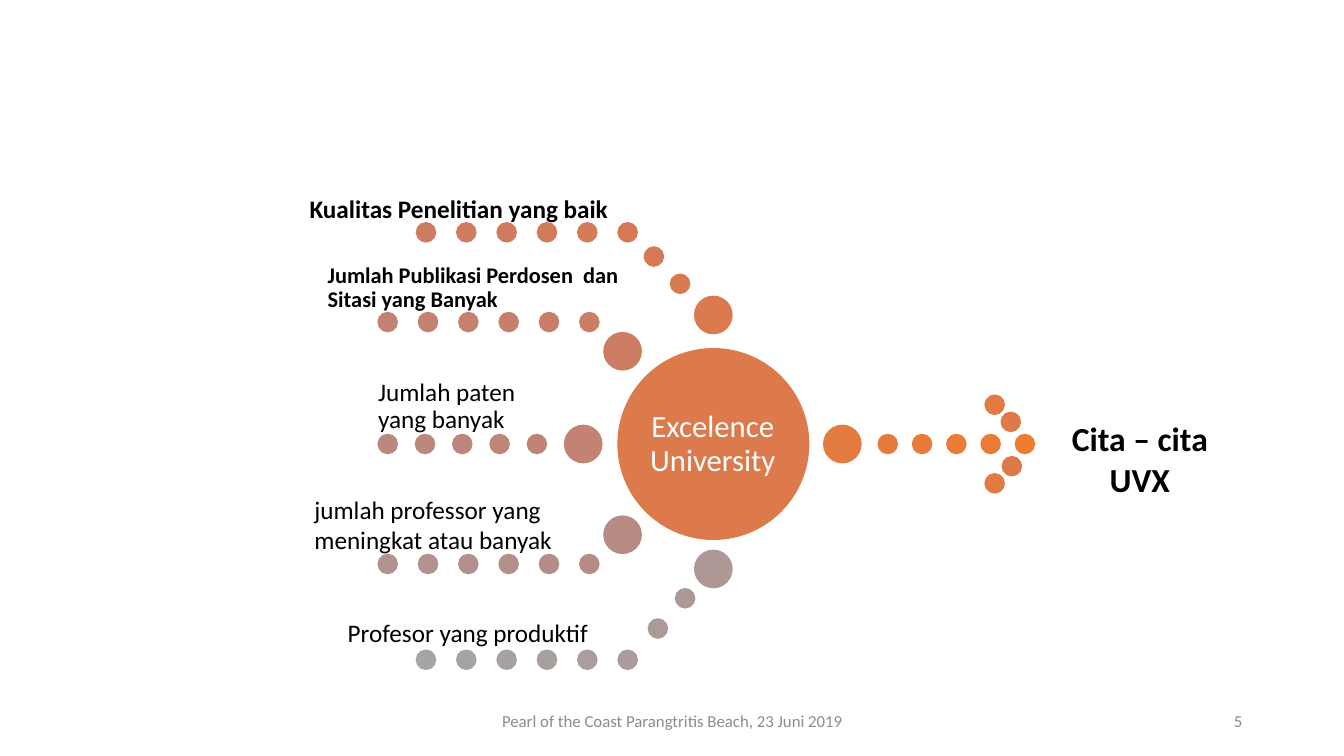
"""Build the radial dot diagram of what makes an excellent university."""
from colorsys import hls_to_rgb, rgb_to_hls
from dataclasses import dataclass, field
from typing import Any

from pptx import Presentation
from pptx.dml.color import RGBColor
from pptx.enum.shapes import MSO_SHAPE as Preset
from pptx.enum.text import MSO_ANCHOR as Anchor
from pptx.enum.text import MSO_AUTO_SIZE as Fit
from pptx.enum.text import PP_ALIGN as Align
from pptx.slide import Slide
from pptx.util import Emu, Pt

EMU_PER_PX = 9144
SMALL, LARGE, HUB = 19, 37, 189
FIRST_COLOUR, LAST_COLOUR, LAST_TONE = "ED7D31", "A5A5A5", 50
BLACK, WHITE, GREY = "000000", "FFFFFF", "8C8C8C"


@dataclass(frozen=True)
class DotRow:
    """Equally spaced dots whose tones count up from the first one."""

    tone: int
    left: int
    top: int
    size: int = SMALL
    count: int = 1
    step: int = -40


@dataclass(frozen=True)
class Label:
    """A text box with its frame, paragraph and font formats."""

    lines: tuple[str, ...]
    box: tuple[int, int, int, int]
    size: int
    colour: str = BLACK
    bold: bool = False
    inset: int | None = None
    frame: dict[str, Any] = field(default_factory=dict)
    para: dict[str, Any] = field(default_factory=dict)


ARROW = [
    DotRow(0, 1007, 431, count=5, step=-34),
    DotRow(5, 817, 422, LARGE),
    DotRow(6, 977, 392),
    DotRow(7, 977, 470),
    DotRow(8, 993, 409),
    DotRow(9, 994, 453),
]
CENTRE = [DotRow(10, 613, 346, HUB)]
BRANCHES = [
    DotRow(11, 689, 294, LARGE),
    DotRow(12, 665, 272),
    DotRow(13, 639, 245),
    DotRow(14, 613, 221, count=6),
    DotRow(20, 599, 330, LARGE),
    DotRow(21, 575, 310, count=6),
    DotRow(27, 560, 422, LARGE),
    DotRow(28, 523, 431, count=5, step=-37),
    DotRow(34, 599, 512, LARGE),
    DotRow(35, 575, 550, count=6),
    DotRow(42, 689, 546, LARGE),
    DotRow(43, 670, 584),
    DotRow(44, 643, 614),
    DotRow(45, 613, 645, count=6),
]

MIDDLE = {"vertical_anchor": Anchor.MIDDLE}
BOTTOM = {"vertical_anchor": Anchor.BOTTOM}
GROW = {"auto_size": Fit.SHAPE_TO_FIT_TEXT}
TIGHT = {"line_spacing": 0.9}
CENTRED = {"alignment": Align.CENTER}
LABELS = [
    Label(("Pearl of the Coast Parangtritis Beach, 23 Juni 2019",),
          (442, 695, 450, 40), 12, GREY, frame=MIDDLE, para=CENTRED),
    Label(("5",), (942, 695, 300, 40), 12, GREY,
          frame=MIDDLE, para={"alignment": Align.RIGHT}),
    Label(("Excelence University",), (640, 374, 134, 134), 22, WHITE,
          inset=3, frame=MIDDLE, para=CENTRED | TIGHT),
    Label(("Kualitas Penelitian yang baik",), (307, 174, 430, 48), 18,
          bold=True, inset=0, frame=BOTTOM, para=TIGHT),
    Label(("Jumlah Publikasi Perdosen  dan Sitasi yang Banyak",),
          (325, 262, 319, 48), 16, bold=True, inset=0, frame=BOTTOM, para=TIGHT),
    Label(("Jumlah paten yang banyak",), (375, 383, 166, 48), 18,
          inset=0, frame=BOTTOM, para=TIGHT),
    Label(("Cita – cita UVX",), (1032, 410, 197, 121), 24,
          bold=True, frame=GROW, para=CENTRED),
    Label(("jumlah professor yang", "meningkat atau banyak"),
          (302, 485, 280, 71), 18, frame=GROW),
    Label(("Profesor yang produktif",), (335, 608, 261, 40), 18,
          frame=GROW | {"word_wrap": False}),
]


def px(length: int) -> Emu:
    """Turn px into EMU."""
    return Emu(length * EMU_PER_PX)


def rgb(colour: str) -> RGBColor:
    """Turn a hex string into a colour."""
    return RGBColor.from_string(colour)


def apply(target: Any, formats: dict[str, Any]) -> None:
    """Set every named format on the target."""
    for name, value in formats.items():
        setattr(target, name, value)


def tone_colour(tone: int) -> str:
    """Blend from the first colour to the last in hue, lightness and saturation."""
    first, last = (
        rgb_to_hls(*(channel / 255 for channel in rgb(colour)))
        for colour in (FIRST_COLOUR, LAST_COLOUR)
    )
    share = tone / LAST_TONE
    blend = (start + (end - start) * share for start, end in zip(first, last))
    return "".join(f"{round(channel * 255):02X}" for channel in hls_to_rgb(*blend))


def draw_dots(page: Slide, row: DotRow) -> None:
    """Draw the circles of one row."""
    for index in range(row.count):
        left = row.left + index * row.step
        dot = page.shapes.add_shape(
            Preset.OVAL, px(left), px(row.top), px(row.size), px(row.size))
        dot.shadow.inherit = False
        colour = rgb(tone_colour(row.tone + index))
        dot.fill.solid()
        dot.fill.fore_color.rgb = colour
        dot.line.color.rgb = colour
        dot.line.width = Pt(1)


def draw_label(page: Slide, label: Label) -> None:
    """Draw one text box."""
    box = page.shapes.add_textbox(*map(px, label.box))
    frame = box.text_frame
    apply(frame, {"word_wrap": True} | label.frame)
    if label.inset is not None:
        sides = ("left", "top", "right", "bottom")
        apply(frame, {f"margin_{side}": px(label.inset) for side in sides})
    for index, line in enumerate(label.lines):
        para = frame.add_paragraph() if index else frame.paragraphs[0]
        apply(para, label.para)
        span = para.add_run()
        span.text = line
        apply(span.font, {"name": "Calibri", "size": Pt(label.size), "bold": label.bold})
        span.font.color.rgb = rgb(label.colour)


def main() -> None:
    """Build and save the deck."""
    deck = Presentation()
    apply(deck, {"slide_width": px(1333), "slide_height": px(750)})
    page = deck.slides.add_slide(deck.slide_layouts[6])
    for row in ARROW + CENTRE + BRANCHES:
        draw_dots(page, row)
    for label in LABELS:
        draw_label(page, label)
    deck.save("out.pptx")


if __name__ == "__main__":
    main()
